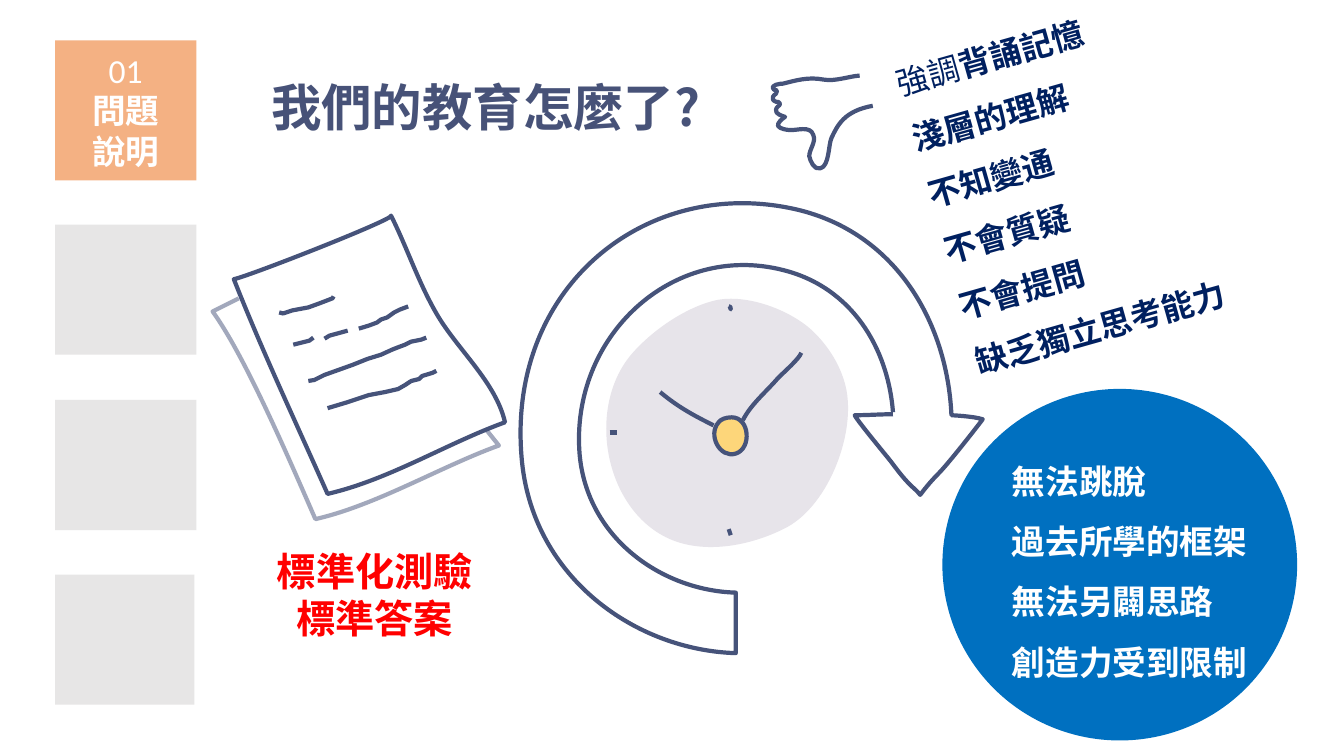
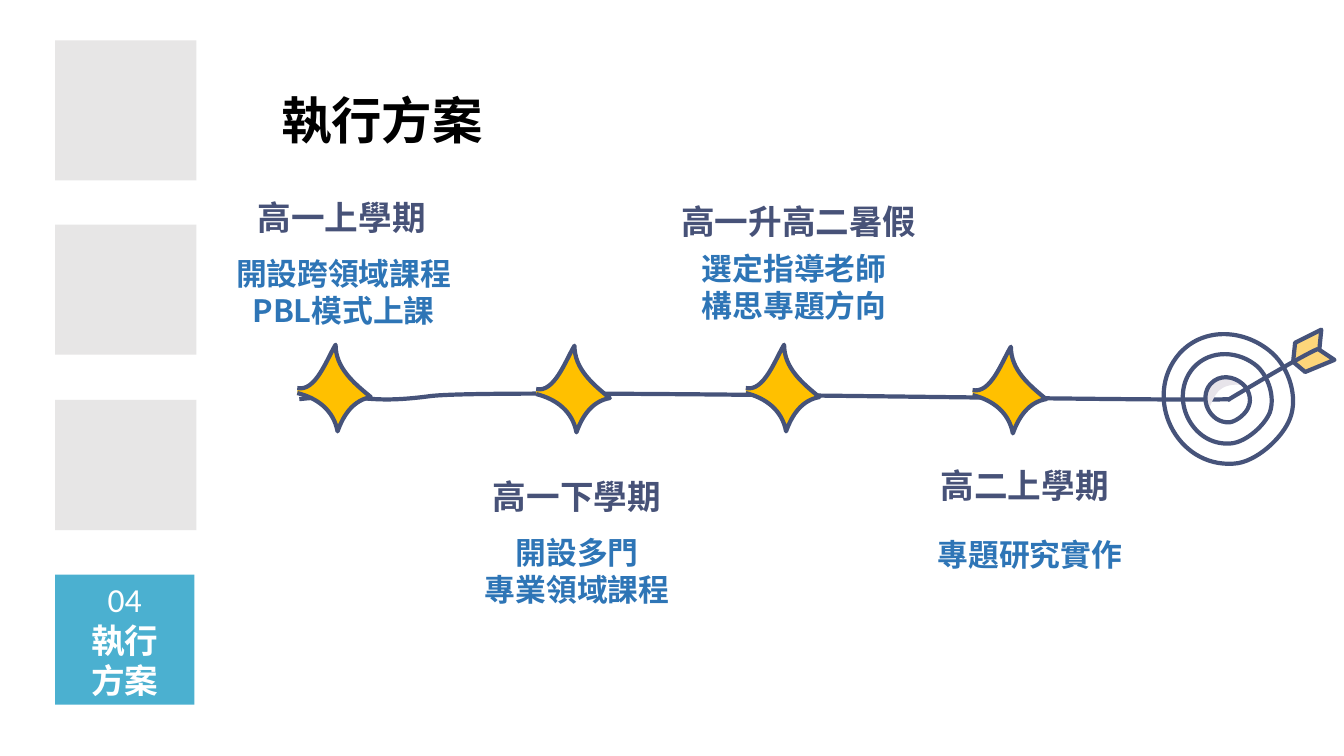
"""Build two slides on education: the problem statement and the action timeline."""
from lxml import etree
from pptx import Presentation
from pptx.dml.color import RGBColor as RGB
from pptx.enum.shapes import MSO_SHAPE as SHAPE
from pptx.enum.text import MSO_ANCHOR as ANCHOR, MSO_AUTO_SIZE as FIT, PP_ALIGN as ALIGN
from pptx.oxml.ns import qn
from pptx.util import Cm, Pt

COLORS = {
    "white": "FFFFFF", "grey": "E7E6E6", "orange": "F4B183", "teal": "4BB0D0",
    "blue": "0070C0", "navy": "002060", "red": "FF0000", "black": "000000",
    "heading": "475278", "detail": "2E75B6", "ink": "46537A",
    "clock": "E7E4EA", "yellow": "FDD67A", "gold": "FFC000",
}
C = {name: RGB.from_string(value) for name, value in COLORS.items()}
CJK, LATIN = "Noto Sans CJK SC", "Calibri"
GRID = Cm(2.54) / 1000


def write(tf, paras, size, color, align=ALIGN.LEFT, spacing=None):
    """Fill a text frame; each paragraph is a list of (text, bold) runs."""
    tf.word_wrap = True
    for i, runs in enumerate(paras):
        p = tf.paragraphs[0] if i == 0 else tf.add_paragraph()
        p.alignment = align
        p.line_spacing = spacing
        for text, bold in runs:
            r = p.add_run()
            r.text = text
            r.font.size, r.font.bold = Pt(size), bold
            r.font.color.rgb = C[color]
            r.font.name = LATIN if text.isdigit() else CJK
            ea = etree.SubElement(r.font._element, qn("a:ea"))
            ea.set("typeface", CJK)


def draw(shapes, path, fill=None, line="ink", close=False):
    """Draw a path of (x, y) lines and (x1, y1, x2, y2, x, y) Bezier curves."""
    points = [(seg[i] * 1000, seg[i + 1] * 1000) for seg in path for i in range(0, len(seg), 2)]
    fb = shapes.build_freeform(*points[0], scale=GRID)
    fb.add_line_segments(points[1:], close=close)
    sp = fb.convert_to_shape()
    nodes = iter(sp.element.findall(".//" + qn("a:lnTo")))
    for seg in path[1:]:
        node = next(nodes)
        if len(seg) == 6:
            node.tag = qn("a:cubicBezTo")
            for extra in (next(nodes), next(nodes)):
                node.append(extra[0])
                extra.getparent().remove(extra)
    sp.shadow.inherit = False
    if fill:
        sp.fill.solid()
        sp.fill.fore_color.rgb = C[fill]
    else:
        sp.fill.background()
    if line:
        sp.line.color.rgb = C[line]
        sp.line.width = Pt(3)
    else:
        sp.line.fill.background()
    return sp


prs = Presentation()
prs.slide_width, prs.slide_height = Cm(33.87), Cm(19.05)

NAV = [(1.02, 3.56, 3.53), (5.66, 3.56, 3.28), (10.08, 3.56, 3.28), (14.48, 3.51, 3.28)]
PAGES = [
    ("我們的教育怎麼了?", "heading", (6.58, 1.8, 13.67, 1.8), 0, "orange", ["問題", "說明"]),
    ("執行方案", "black", (6.83, 2.13, 9.25, 1.8), 3, "teal", ["執行", "方案"]),
]
slides = []
for title, color, box, active, accent, words in PAGES:
    s = prs.slides.add_slide(prs.slide_layouts[5])
    slides.append(s)
    sp = s.shapes.title
    sp.left, sp.top, sp.width, sp.height = map(Cm, box)
    sp.text_frame.auto_size = FIT.NONE
    sp.text_frame.vertical_anchor = ANCHOR.TOP
    write(sp.text_frame, [[(title, True)]], 36, color)
    for i, (top, width, height) in enumerate(NAV):
        sp = s.shapes.add_shape(SHAPE.RECTANGLE, Cm(1.39), Cm(top), Cm(width), Cm(height))
        sp.shadow.inherit = False
        sp.fill.solid()
        sp.fill.fore_color.rgb = C[accent if i == active else "grey"]
        sp.line.fill.background()
        if i == active:
            sp.text_frame.vertical_anchor = ANCHOR.MIDDLE
            write(sp.text_frame, [[(f"{i + 1:02}", False)]] + [[(word, True)] for word in words],
                  24, "white", ALIGN.CENTER)
problem, plan = slides

sp = problem.shapes.add_shape(SHAPE.OVAL, Cm(23.75), Cm(9.8), Cm(8.94), Cm(8.86))
sp.shadow.inherit = False
sp.fill.solid()
sp.fill.fore_color.rgb = C["blue"]
sp.line.fill.background()

NOTES = [
    ((5.66, 13.67, 7.57, 2.64), 0, 28, "red", ALIGN.CENTER, None,
     [[("標準化測驗", True)], [("標準答案", True)]]),
    ((25.25, 10.97, 8.2, 7.77), 0, 24, "white", ALIGN.LEFT, 1.5,
     [[("無法跳脫", True)], [("過去所學的框架", True)],
      [("無法另闢思路", True)], [("創造力受到限制", True)]]),
    ((23.09, -0.46, 10.41, 8.92), 344.2, 23, "navy", ALIGN.LEFT, 1.5,
     [[("強調", False), ("背誦記憶", True)], [("淺層的理解", True)],
      [("不知變通", True)], [("不會質疑", True)],
      [("不會提問", True)], [("缺乏獨立思考能力", True)]]),
]
for box, rotation, size, color, align, spacing, paras in NOTES:
    sp = problem.shapes.add_textbox(*map(Cm, box))
    sp.rotation = rotation
    write(sp.text_frame, paras, size, color, align, spacing)

clock = problem.shapes.add_group_shape().shapes
draw(clock, [
    (8.08, 3.3), (7.86, 3.08, 7.41, 2.91, 7.1, 2.98), (6.8, 3.05, 6.47, 3.28, 6.27, 3.51),
    (5.83, 4.02, 5.98, 4.98, 6.57, 5.31), (6.94, 5.52, 7.45, 5.42, 7.81, 5.23),
    (8.23, 5, 8.5, 4.28, 8.39, 3.83), (8.34, 3.63, 8.23, 3.45, 8.08, 3.3),
], "clock", None, True)
draw(clock, [
    (7.26, 4.14), (7.2, 4.14, 7.15, 4.16, 7.13, 4.19), (7.02, 4.31, 7.14, 4.55, 7.3, 4.5),
    (7.46, 4.45, 7.44, 4.14, 7.26, 4.14),
], "yellow", close=True)
HANDS_AND_TICKS = [
    [(6.55, 3.89), (6.73, 4.04, 6.88, 4.12, 7.08, 4.22)],
    [(7.37, 4.17), (7.45, 4.01, 7.61, 3.88, 7.72, 3.75), (7.78, 3.69, 7.93, 3.56, 7.95, 3.5)],
    [(7.23, 3.04), (7.24, 3.05, 7.25, 3.03, 7.25, 3.07), (7.25, 3.06, 7.24, 3.05, 7.24, 3.04)],
    [(6.05, 4.29), (6.08, 4.29, 6.09, 4.29, 6.12, 4.29)],
    [(7.23, 5.25), (7.24, 5.27, 7.24, 5.29, 7.25, 5.31)],
]
for path in HANDS_AND_TICKS:
    draw(clock, path)

draw(problem.shapes, [
    (8.86, 4.11), (8.73, 4.11, 8.61, 4.12, 8.48, 4.12), (8.51, 4.18, 8.76, 4.48, 8.84, 4.58),
    (8.9, 4.66, 8.96, 4.74, 9.03, 4.81), (9.06, 4.84, 9.1, 4.87, 9.13, 4.91),
    (9.19, 4.83, 9.25, 4.76, 9.31, 4.7), (9.41, 4.6, 9.69, 4.24, 9.75, 4.16),
    (9.66, 4.13, 9.44, 4.12, 9.44, 4.12), (9.4, 3.22, 8.91, 2.34, 7.95, 2.09),
    (6.44, 1.71, 5, 2.84, 5.18, 4.59), (5.3, 5.74, 6.31, 6.45, 7.3, 6.48), (7.3, 5.88),
    (6.57, 5.86, 5.82, 5.34, 5.75, 4.5), (5.66, 3.34, 6.67, 2.4, 7.77, 2.68),
    (8.45, 2.85, 8.81, 3.45, 8.86, 4.09),
])

paper = problem.shapes.add_group_shape().shapes
draw(paper, [
    (3.88, 2.14), (3.9, 2.18, 2.47, 2.74, 2.32, 2.77), (2.6, 3.48, 2.94, 4.2, 3.25, 4.9),
    (3.86, 4.76, 4.43, 4.4, 5.01, 4.19), (4.92, 3.79, 4.53, 3.46, 4.33, 3.11),
    (4.15, 2.8, 4.04, 2.46, 3.88, 2.14),
], close=True)
sp = draw(paper, [
    (2.37, 2.96), (2.11, 3.09), (2.42, 3.52, 2.82, 4.44, 3.13, 5.15),
    (3.74, 5.01, 4.37, 4.63, 4.95, 4.42), (4.83, 4.27),
])
clr = sp.element.find(".//" + qn("a:ln")).find(".//" + qn("a:srgbClr"))
etree.SubElement(clr, qn("a:alpha")).set("val", "49000")
HANDWRITING = [
    [(2.77, 3.1), (2.81, 3.11), (2.9, 3.08), (3.06, 3.05), (3.17, 3.01), (3.3, 2.96), (3.31, 2.94)],
    [(2.91, 3.42), (2.99, 3.4), (3.07, 3.38), (3.11, 3.35)],
    [(3.22, 3.36), (3.27, 3.33), (3.38, 3.3), (3.45, 3.28)],
    [(3.56, 3.26), (3.66, 3.23), (3.74, 3.2), (3.78, 3.17), (3.84, 3.15), (3.91, 3.1),
     (3.97, 3.07), (4.05, 3.04)],
    [(3.06, 3.78), (3.12, 3.77), (3.22, 3.72), (3.36, 3.67), (3.5, 3.62), (3.65, 3.56),
     (3.78, 3.52), (3.89, 3.47), (3.94, 3.45), (4.02, 3.42), (4.08, 3.39), (4.18, 3.37),
     (4.23, 3.35)],
    [(3.25, 4.05), (3.45, 3.99), (3.66, 3.92), (3.82, 3.89), (3.95, 3.86), (4.02, 3.82),
     (4.08, 3.78), (4.16, 3.76), (4.19, 3.73), (4.29, 3.7), (4.33, 3.68)],
]
for path in HANDWRITING:
    draw(paper, path)

draw(problem.shapes, [
    (8.66, 1.05), (8.38, 1.1, 8.31, 1.24, 8.25, 1.37), (8.22, 1.43, 8.23, 1.65, 8.14, 1.67),
    (8.08, 1.69, 8.04, 1.6, 8.03, 1.55), (8.03, 1.48, 8.1, 1.41, 8.07, 1.34),
    (8.04, 1.24, 7.9, 1.3, 7.83, 1.29), (7.81, 1.29, 7.74, 1.28, 7.72, 1.25),
    (7.71, 1.22, 7.76, 1.18, 7.79, 1.16), (7.76, 1.15, 7.69, 1.13, 7.7, 1.09),
    (7.7, 1.06, 7.74, 1.05, 7.74, 1.03), (7.74, 1.01, 7.71, 1.01, 7.7, 1.01),
    (7.67, 1, 7.66, 0.98, 7.67, 0.96), (7.67, 0.95, 7.69, 0.94, 7.7, 0.93),
    (7.7, 0.92, 7.71, 0.91, 7.71, 0.9), (7.71, 0.89, 7.69, 0.9, 7.68, 0.89),
    (7.63, 0.84, 7.75, 0.83, 7.77, 0.83), (7.89, 0.8, 8.02, 0.76, 8.17, 0.79),
    (8.29, 0.81, 8.41, 0.76, 8.53, 0.75),
])

draw(plan.shapes, [
    (2.97, 3.96), (3.63, 3.89, 3.59, 4.02, 4.27, 3.93), (4.88, 3.85, 11.6, 3.99, 12.21, 3.96),
])

target = plan.shapes.add_group_shape().shapes
draw(target, [
    (12.32, 3.81), (12.31, 3.76, 12.2, 3.74, 12.17, 3.74), (12.11, 3.74, 12.05, 3.76, 12.01, 3.81),
    (11.96, 3.86, 11.91, 4.02, 11.98, 4.08), (12.02, 4.01, 12.04, 3.93, 12.09, 3.88),
    (12.15, 3.82, 12.24, 3.81, 12.32, 3.82),
], "clock", None, True)
RINGS = [
    [(12.63, 3.51), (12.37, 3.27, 11.95, 3.23, 11.7, 3.51), (11.33, 3.94, 11.67, 4.64, 12.24, 4.6),
     (12.46, 4.59, 12.73, 4.34, 12.8, 4.15), (12.88, 3.94, 12.79, 3.66, 12.63, 3.51)],
    [(12.48, 3.64), (12.3, 3.48, 12.01, 3.46, 11.84, 3.65), (11.59, 3.94, 11.82, 4.43, 12.21, 4.4),
     (12.36, 4.39, 12.55, 4.22, 12.6, 4.09), (12.65, 3.94, 12.59, 3.75, 12.48, 3.64)],
    [(12.33, 3.81), (12.24, 3.73, 12.1, 3.71, 12.01, 3.81), (11.89, 3.95, 12, 4.2, 12.2, 4.19),
     (12.27, 4.18, 12.37, 4.1, 12.39, 4.03), (12.42, 3.96, 12.39, 3.86, 12.33, 3.81)],
]
for path in RINGS:
    draw(target, path, close=True)
draw(target, [(13.09, 3.47), (13.24, 3.57), (12.95, 3.69), (12.83, 3.59), (12.85, 3.4),
              (13.11, 3.27)], "yellow", close=True)
draw(target, [(12.18, 3.97), (12.18, 3.97, 12.91, 3.53, 13.08, 3.46)])

STAR = [
    (0, 0.43), (0.18, 0.47, 0.29, 0.15, 0.38, 0), (0.38, 0.23, 0.56, 0.38, 0.73, 0.52),
    (0.56, 0.55, 0.46, 0.69, 0.4, 0.86), (0.36, 0.65, 0.2, 0.53, 0, 0.48),
]
MILESTONES = [
    ((2.95, 3.42), "高一上學期", (3.81, 4.7, 9.6, 1.32),
     ["開設跨領域課程", "PBL模式上課"], (5.36, 6.3, 6.6, 2.13)),
    ((5.32, 3.43), "高一下學期", (10.41, 11.73, 8.26, 1.35),
     ["開設多門", "專業領域課程"], (9.78, 13.33, 9.53, 2.13)),
    ((7.4, 3.42), "高一升高二暑假", (16.67, 4.8, 6.93, 1.32),
     ["選定指導老師", "構思專題方向"], (15.25, 6.18, 9.53, 2.13)),
    ((9.65, 3.44), "高二上學期", (21.09, 11.45, 9.47, 1.35),
     ["專題研究實作"], (21.19, 13.38, 9.53, 1.19)),
]
for origin, term, term_box, tasks, task_box in MILESTONES:
    draw(plan.shapes, [tuple(v + origin[i % 2] for i, v in enumerate(seg)) for seg in STAR], "gold")
    tf = plan.shapes.add_textbox(*map(Cm, term_box)).text_frame
    tf.margin_left = tf.margin_right = tf.margin_top = tf.margin_bottom = Cm(0.1)
    tf.vertical_anchor = ANCHOR.MIDDLE
    write(tf, [[(term, True)]], 24, "heading", ALIGN.CENTER, 1.2)
    tf = plan.shapes.add_textbox(*map(Cm, task_box)).text_frame
    write(tf, [[(task, True)] for task in tasks], 22, "detail", ALIGN.CENTER)

prs.save("out.pptx")
